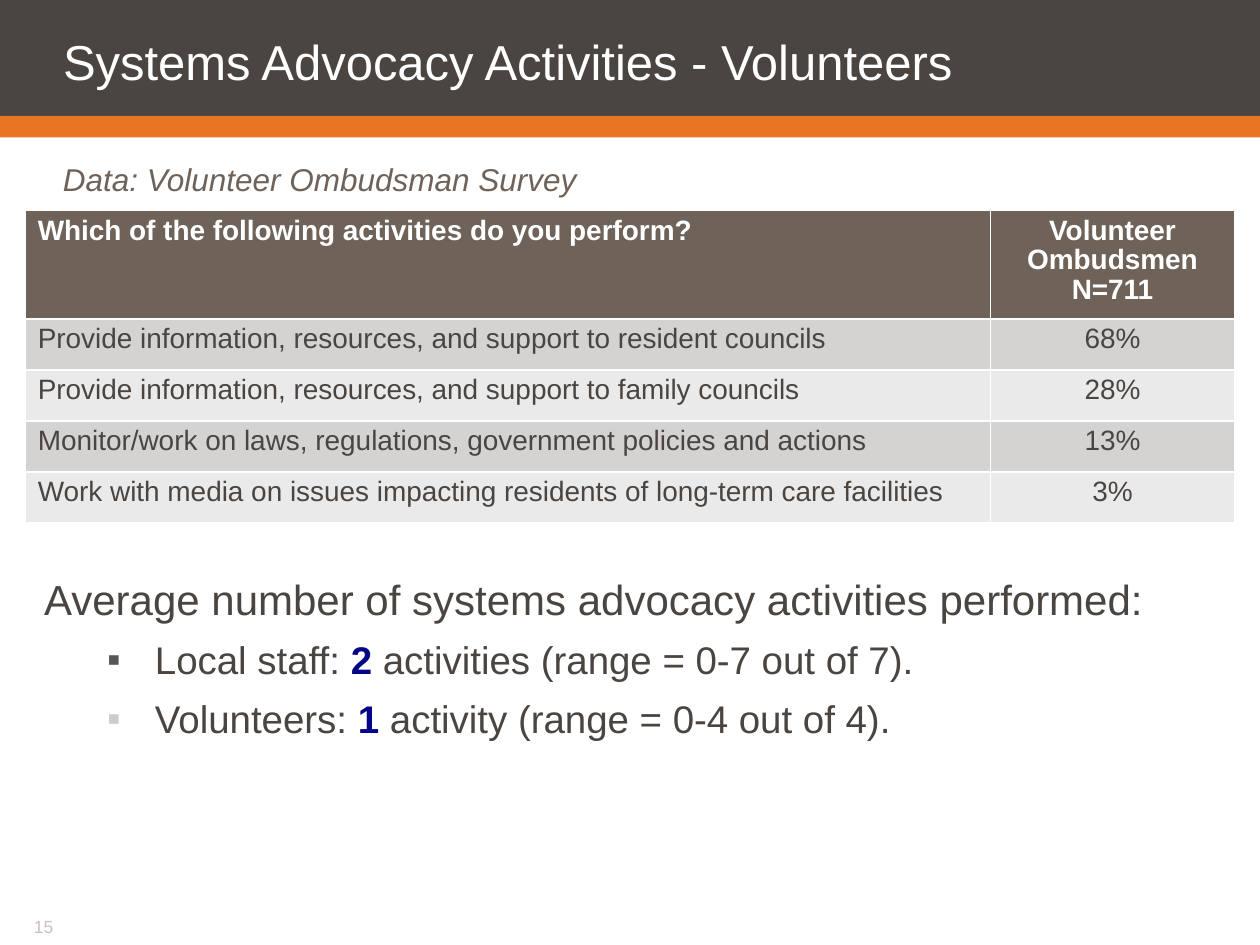
from dataclasses import dataclass

from lxml import etree
from pptx import Presentation
from pptx.dml.color import RGBColor
from pptx.enum.shapes import MSO_SHAPE
from pptx.enum.text import MSO_ANCHOR, MSO_AUTO_SIZE, PP_ALIGN
from pptx.oxml.ns import qn
from pptx.util import Inches, Pt


@dataclass(frozen=True)
class Theme:
    font: str = "Arial"
    dark: str = "4A4541"
    brown: str = "6E6259"
    orange: str = "E87424"
    white: str = "FFFFFF"
    navy: str = "040488"
    page_gray: str = "C8C2BF"
    bands: tuple = ("D5D3D1", "EBEAEA")
    title_size: int = 28
    lead_size: int = 24
    bullet_size: int = 22
    source_size: int = 18
    table_size: int = 16
    page_size: int = 10


THEME = Theme()

ACTIVITIES = [
    ("Provide information, resources, and support to resident councils", "68%"),
    ("Provide information, resources, and support to family councils", "28%"),
    ("Monitor/work on laws, regulations, government policies and actions", "13%"),
    ("Work with media on issues impacting residents of long-term care facilities", "3%"),
]
# Bullet colour, then the text before, inside and after the highlight
AVERAGES = [
    ("55565A", "Local staff: ", "2 ", "activities (range = 0-7 out of 7)."),
    ("CCCCCC", "Volunteers: ", "1 ", "activity (range = 0-4 out of 4)."),
]


def style(font, size, color, bold=False, italic=False):
    font.name, font.size = THEME.font, Pt(size)
    font.bold, font.italic = bold, italic
    font.color.rgb = RGBColor.from_string(color)


def set_insets(frame, left, top, right, bottom):
    frame.margin_left, frame.margin_top = Inches(left), Inches(top)
    frame.margin_right, frame.margin_bottom = Inches(right), Inches(bottom)


def add_band(slide, top, height, color):
    band = slide.shapes.add_shape(
        MSO_SHAPE.RECTANGLE, 0, Inches(top), Inches(10), Inches(height))
    band.shadow.inherit = False
    band.fill.solid()
    band.fill.fore_color.rgb = RGBColor.from_string(color)
    band.line.fill.background()


def add_text_frame(slide, left, top, width, height, insets, wrap=True):
    box = slide.shapes.add_textbox(
        Inches(left), Inches(top), Inches(width), Inches(height))
    frame = box.text_frame
    frame.word_wrap = wrap
    set_insets(frame, *insets)
    return frame


def place_title(slide, text):
    title = slide.shapes.title
    title.left, title.top = 0, 0
    title.width, title.height = Inches(10), Inches(0.92)
    frame = title.text_frame
    frame.text = text
    frame.auto_size = MSO_AUTO_SIZE.NONE
    frame.vertical_anchor = MSO_ANCHOR.MIDDLE
    set_insets(frame, 0.5, 0.13, 0.1, 0)
    heading = frame.paragraphs[0]
    heading.alignment = PP_ALIGN.LEFT
    heading.line_spacing = Pt(28)
    style(heading.runs[0].font, THEME.title_size, THEME.white)
    # Bring the title in front of the dark band
    slide.shapes._spTree.append(title._element)


def add_line(slide, text, at, insets, size, color, wrap=True, italic=False):
    frame = add_text_frame(slide, *at, insets, wrap)
    frame.text = text
    style(frame.paragraphs[0].runs[0].font, size, color, italic=italic)


def fill_cell(cell, text, fill, color, bold=False, centered=False):
    cell.fill.solid()
    cell.fill.fore_color.rgb = RGBColor.from_string(fill)
    cell.text_frame.text = text
    for paragraph in cell.text_frame.paragraphs:
        paragraph.line_spacing = 0.95
        paragraph.alignment = PP_ALIGN.CENTER if centered else PP_ALIGN.LEFT
        style(paragraph.runs[0].font, THEME.table_size, color, bold)


def add_activity_table(slide):
    header = ("Which of the following activities do you perform?",
              "Volunteer Ombudsmen\nN=711")
    table = slide.shapes.add_table(
        len(ACTIVITIES) + 1, 2, Inches(0.2), Inches(1.67),
        Inches(9.6), Inches(2.45)).table
    for column, width in zip(table.columns, (7.66, 1.94)):
        column.width = Inches(width)
    for index, values in enumerate([header] + ACTIVITIES):
        is_header = index == 0
        table.rows[index].height = Inches(0.83 if is_header else 0.405)
        fill = THEME.brown if is_header else THEME.bands[(index - 1) % 2]
        color = THEME.white if is_header else THEME.dark
        for col, text in enumerate(values):
            fill_cell(table.cell(index, col), text, fill, color,
                      bold=is_header, centered=col == 1)


def set_bullet(paragraph, color):
    props = paragraph._p.get_or_add_pPr()
    props.set("marL", str(Inches(0.88)))
    props.set("indent", str(Inches(-0.38)))
    bullet_color = etree.SubElement(props, qn("a:buClr"))
    etree.SubElement(bullet_color, qn("a:srgbClr"), val=color)
    etree.SubElement(props, qn("a:buFont"), typeface=THEME.font)
    etree.SubElement(props, qn("a:buChar"), char="▪")


def add_averages(slide):
    frame = add_text_frame(slide, 0.35, 4.46, 8.92, 2.07, (0, 0.07, 0, 0.05))
    frame.text = "Average number of systems advocacy activities performed:"
    style(frame.paragraphs[0].runs[0].font, THEME.lead_size, THEME.dark)
    for bullet_color, group, count, detail in AVERAGES:
        average = frame.add_paragraph()
        average.level = 1
        set_bullet(average, bullet_color)
        for text in (group, count, detail):
            run = average.add_run()
            run.text = text
            highlighted = text == count
            style(run.font, THEME.bullet_size,
                  THEME.navy if highlighted else THEME.dark, bold=highlighted)
    for paragraph in frame.paragraphs:
        paragraph.line_spacing = 1.05
        paragraph.space_after = Pt(6)


def main():
    prs = Presentation()
    prs.slide_width, prs.slide_height = Inches(10), Inches(7.5)
    slide = prs.slides.add_slide(prs.slide_layouts[5])

    # Header bands and title
    add_band(slide, 0, 0.92, THEME.dark)
    add_band(slide, 0.92, 0.17, THEME.orange)
    place_title(slide, "Systems Advocacy Activities - Volunteers")

    # Survey results
    add_line(slide, "Data: Volunteer Ombudsman Survey", (0, 1.2, 10, 0.35),
             (0.5, 0.07, 0, 0.05), THEME.source_size, THEME.brown, italic=True)
    add_activity_table(slide)
    add_averages(slide)

    # Page number
    add_line(slide, "15", (0.17, 7.27, 1.92, 0.18), (0.1, 0, 0.1, 0.05),
             THEME.page_size, THEME.page_gray, wrap=False)

    prs.save("out.pptx")


if __name__ == "__main__":
    main()
